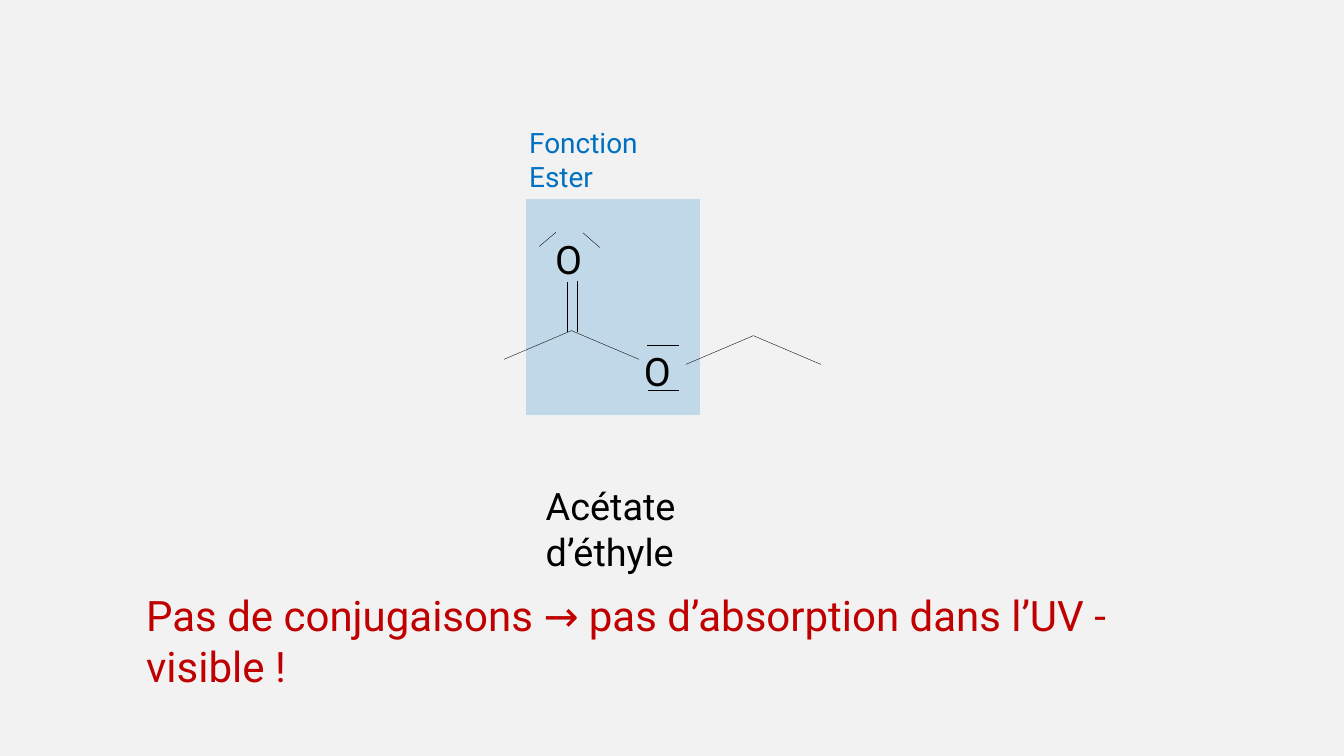
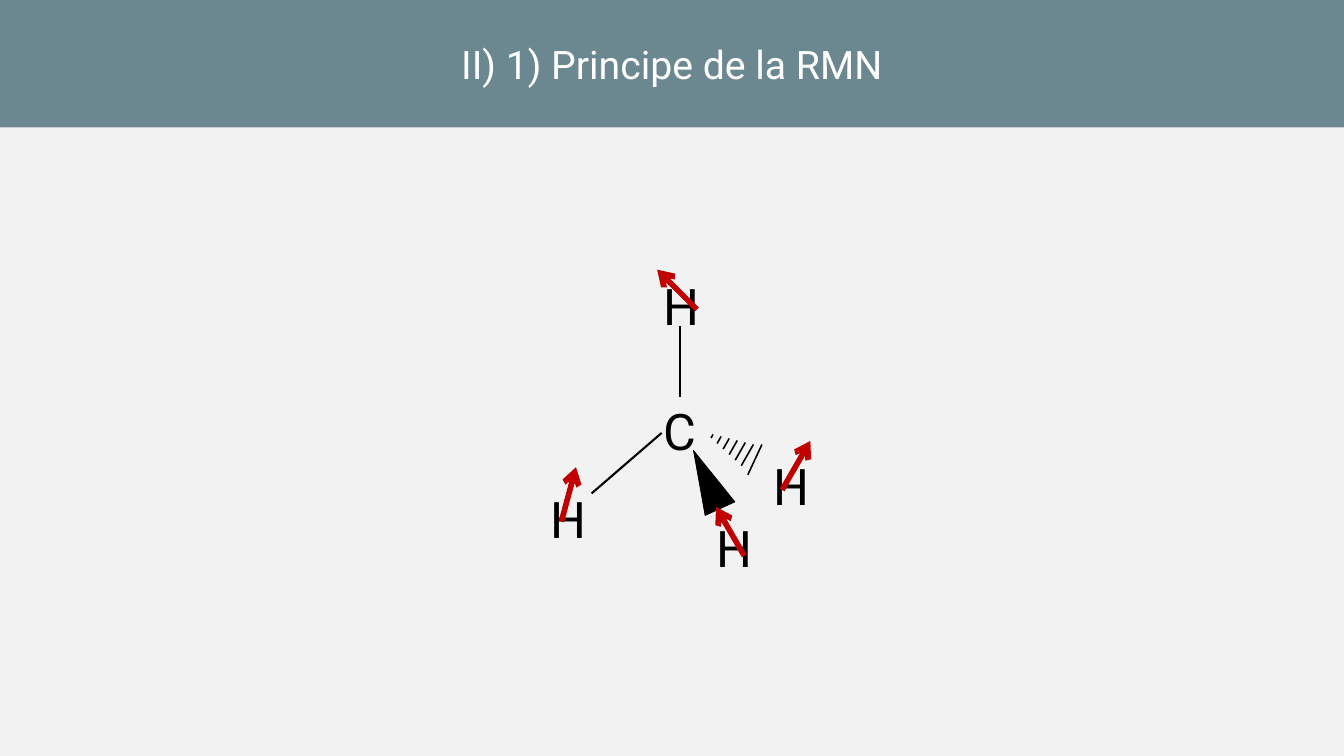
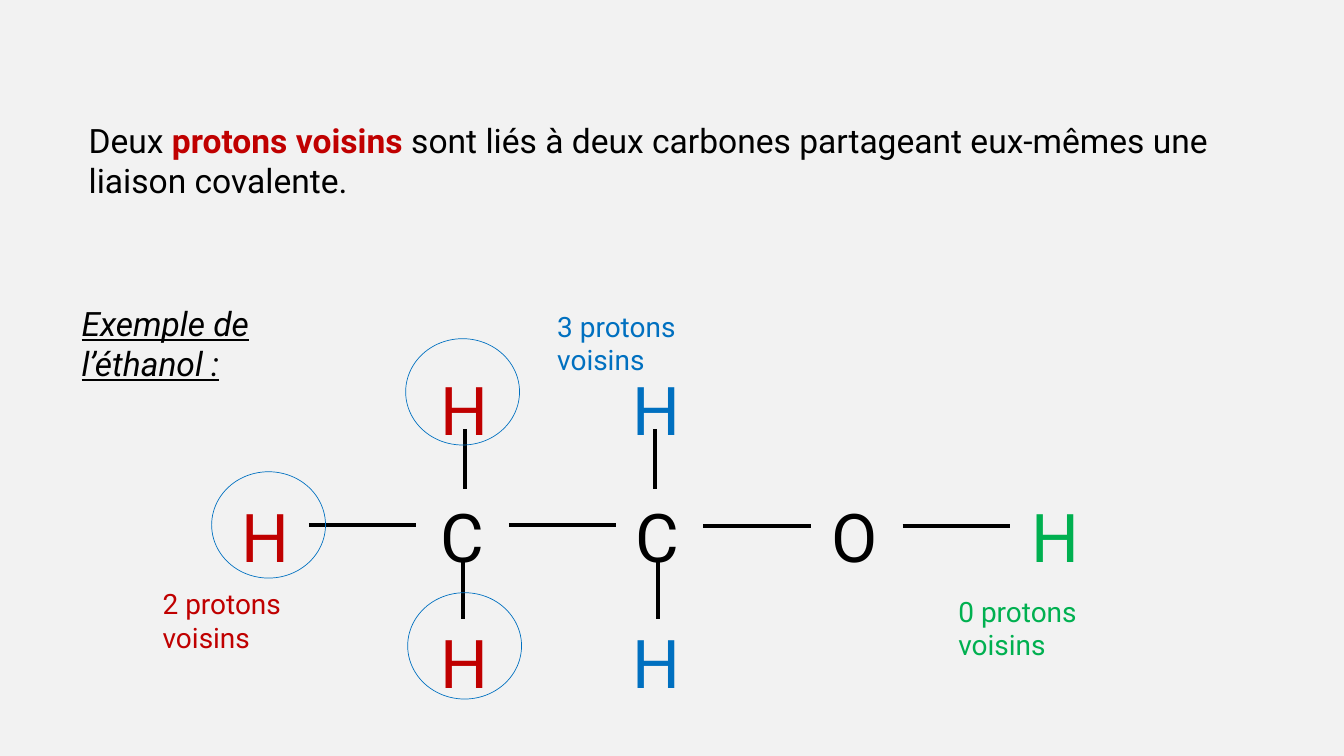
from lxml.etree import SubElement
from pptx import Presentation
from pptx.dml.color import RGBColor
from pptx.enum.shapes import MSO_CONNECTOR, MSO_SHAPE
from pptx.enum.text import MSO_ANCHOR, MSO_AUTO_SIZE, PP_ALIGN
from pptx.oxml.ns import qn
from pptx.util import Inches, Pt

COLUMNS, ROWS = 26.67, 15
CELL = Inches(1)
FONT = "Roboto"
COLORS = {
    "background": "F2F2F2",
    "band": "6B8891",
    "white": "FFFFFF",
    "black": "000000",
    "blue": "0070C0",
    "red": "C00000",
    "green": "00B050",
}
CENTERED_LABEL = {"anchor": MSO_ANCHOR.MIDDLE, "inset": 0.06}


def color(name):
    return RGBColor.from_string(COLORS[name])


def cells(*values):
    return [round(value * CELL) for value in values]


class Deck:
    def __init__(self):
        self.presentation = Presentation()
        self.presentation.slide_width, self.presentation.slide_height = cells(COLUMNS, ROWS)
        self.slide = None

    def add_slide(self):
        self.slide = self.presentation.slides.add_slide(self.presentation.slide_layouts[6])
        fill = self.slide.background.fill
        fill.solid()
        fill.fore_color.rgb = color("background")

    def styled_run(self, paragraph, text, size, ink, **formats):
        run = paragraph.add_run()
        run.text = text
        run.font.color.rgb = color(ink)
        for name, value in {"name": FONT, "size": Pt(size), **formats}.items():
            setattr(run.font, name, value)

    def text(self, box, runs, size, wrap=True, anchor=MSO_ANCHOR.TOP, inset=None):
        frame = self.slide.shapes.add_textbox(*cells(*box)).text_frame
        settings = {
            "word_wrap": wrap,
            "auto_size": MSO_AUTO_SIZE.SHAPE_TO_FIT_TEXT,
            "vertical_anchor": anchor,
        }
        if inset is not None:
            for side in ("left", "top", "right", "bottom"):
                settings[f"margin_{side}"] = Inches(inset)
        for name, value in settings.items():
            setattr(frame, name, value)
        for text, ink, formats in runs:
            self.styled_run(frame.paragraphs[0], text, size, ink, **formats)

    def label(self, box, text, size, ink, formats=None, **settings):
        self.text(box, [(text, ink, formats or {})], size, **settings)

    def atom(self, symbol, left, top, size, ink="black"):
        box = (left, top, size / 80, size / 56)
        self.label(box, symbol, size, ink, wrap=False)

    def shape(self, kind, box, fill=None, line=None, opacity=None, rotation=0):
        shape = self.slide.shapes.add_shape(kind, *cells(*box))
        shape.shadow.inherit = False
        shape.rotation = rotation
        if fill:
            shape.fill.solid()
            shape.fill.fore_color.rgb = color(fill)
        else:
            shape.fill.background()
        if opacity:
            tint = shape.element.spPr.find(f"{qn('a:solidFill')}/{qn('a:srgbClr')}")
            SubElement(tint, qn("a:alpha"), val=str(opacity * 1000))
        if line:
            shape.line.color.rgb = color(line)
            shape.line.width = Pt(1)
        else:
            shape.line.fill.background()
        return shape

    def line(self, start, end, width, ink="black", arrow=False):
        connector = self.slide.shapes.add_connector(MSO_CONNECTOR.STRAIGHT, *cells(*start, *end))
        connector.line.color.rgb = color(ink)
        connector.line.width = Pt(width)
        properties = connector.element.spPr
        if arrow:
            SubElement(properties.find(qn("a:ln")), qn("a:tailEnd"), type="arrow")
        SubElement(properties, qn("a:effectLst"))

    def title_band(self, title):
        band = self.shape(MSO_SHAPE.RECTANGLE, (0, 0, COLUMNS, 2.53), "band")
        band.text_frame.vertical_anchor = MSO_ANCHOR.MIDDLE
        paragraph = band.text_frame.paragraphs[0]
        paragraph.alignment = PP_ALIGN.CENTER
        self.styled_run(paragraph, title, 56, "white")


def ethyl_acetate(deck):
    deck.add_slide()
    deck.label((10.77, 9.97, 4.84, 1.02), "Acétate d’éthyle", 54, "black", **CENTERED_LABEL)
    deck.label((10.44, 2.77, 3.4, 0.79), "Fonction Ester", 40, "blue", **CENTERED_LABEL)
    deck.label(
        (2.84, 12.14, 21.01, 1.12),
        "Pas de conjugaisons → pas d’absorption dans l’UV - visible !",
        60, "red", **CENTERED_LABEL,
    )
    deck.shape(MSO_SHAPE.RECTANGLE, (10.44, 3.95, 3.45, 4.28), "blue", opacity=20)
    for peak_x, peak_y in ((11.34, 6.56), (14.95, 6.66)):
        for side in (-1, 1):
            deck.line((peak_x + side * 1.34, peak_y + 0.57), (peak_x, peak_y), 0.5)
    deck.atom("O", 12.68, 6.84, 56)
    deck.atom("O", 10.92, 4.61, 56)
    for left, top in ((12.84, 6.84), (12.85, 7.75)):
        deck.line((left, top), (left + 0.63, top), 0.5)
    for left, bottom in ((11.25, 6.59), (11.46, 6.58)):
        deck.line((left, bottom), (left, bottom - 1), 0.5)
    deck.line((10.7, 4.89), (11.03, 4.61), 0.5)
    deck.line((11.9, 4.91), (11.57, 4.62), 0.5)


def nmr_principle(deck):
    deck.add_slide()
    deck.atom("C", 13.06, 7.88, 72)
    for left, top in ((10.82, 9.64), (14.13, 10.22), (15.26, 8.98), (13.06, 5.4)):
        deck.atom("H", left, top, 72)
    deck.line((13.5, 6.47), (13.5, 7.88), 3)
    deck.line((13.13, 8.59), (11.74, 9.79), 3)
    deck.shape(
        MSO_SHAPE.ISOSCELES_TRIANGLE, (13.7, 8.88, 0.65, 1.27), "black", "black", rotation=335.5
    )
    for step in range(6):
        deck.line(
            (14.11 + 0.12 * step, 8.69 + 0.11 * step),
            (14.15 + 0.16 * step, 8.62 + 0.04 * step),
            2.25,
        )
    deck.line((14.84, 9.42), (15.12, 8.82), 2.25)
    spins = (
        ((13.83, 6.14), (13.04, 5.35)),
        ((11.14, 10.35), (11.43, 9.27)),
        ((15.52, 9.72), (16.08, 8.75)),
        ((14.77, 11.03), (14.21, 10.06)),
    )
    for start, end in spins:
        deck.line(start, end, 8, "red", arrow=True)
    deck.title_band("II) 1) Principe de la RMN")


def neighbouring_protons(deck):
    deck.add_slide()
    chain = (
        ("C", 8.64, "black"), ("C", 12.52, "black"), ("O", 16.4, "black"),
        ("H", 20.38, "green"), ("H", 4.69, "red"),
    )
    for symbol, left, ink in chain:
        deck.atom(symbol, left, 9.77, 96, ink)
    for left, ink in ((8.64, "red"), (12.45, "blue")):
        for top in (7.26, 12.28):
            deck.atom("H", left, top, 96, ink)
    for left, top in ((13.96, 10.44), (17.91, 10.44), (10.1, 10.41), (6.13, 10.41)):
        deck.line((left, top), (left + 2.13, top), 6)
    for left, top in ((13, 8.52), (9.18, 11.1), (9.22, 8.52), (13.06, 11.1)):
        deck.line((left, top), (left, top + 1.18), 6)
    counts = ((0, 18.92, 11.74, "green"), (2, 3.13, 11.59, "red"), (3, 10.96, 6.09, "blue"))
    for count, left, top, ink in counts:
        deck.label((left, top, 4.07, 0.77), f"{count} protons voisins", 40, ink)
    deck.label(
        (1.52, 5.96, 5.84, 0.91), "Exemple de l’éthanol :", 48, "black",
        {"italic": True, "underline": True},
    )
    definition = [
        ("Deux ", "black", {}),
        ("protons voisins ", "red", {"bold": True}),
        ("sont liés à deux carbones partageant eux-mêmes une liaison covalente.", "black", {}),
    ]
    deck.text((1.66, 2.33, 23.89, 1.72), definition, 48)
    for left, top in ((8.05, 6.72), (8.09, 11.76), (4.2, 9.36)):
        deck.shape(MSO_SHAPE.OVAL, (left, top, 2.26, 2.11), line="blue")


def main():
    deck = Deck()
    for build in (ethyl_acetate, nmr_principle, neighbouring_protons):
        build(deck)
    deck.presentation.save("out.pptx")


if __name__ == "__main__":
    main()
